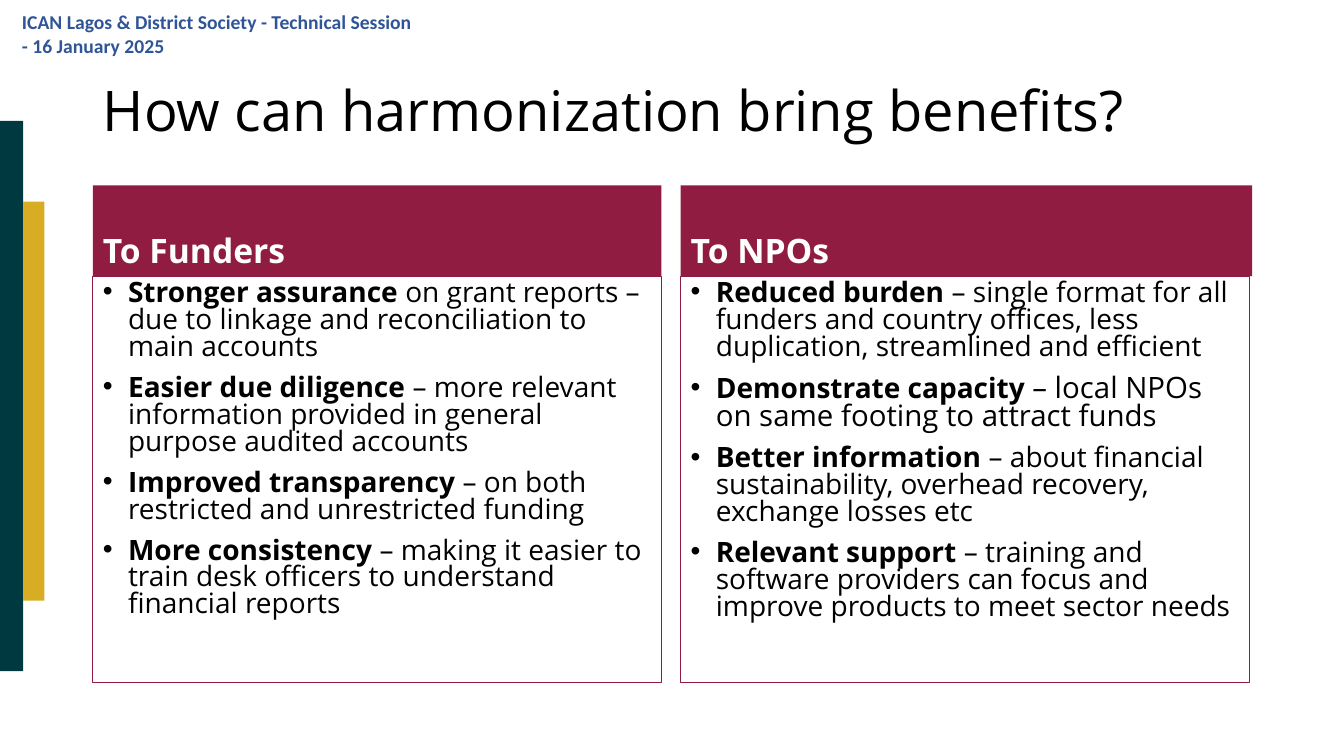
"""Builds the slide on how harmonization benefits funders and NPOs."""
import pptx
import pptx.dml.color
import pptx.enum.shapes
import pptx.enum.text
import pptx.oxml
import pptx.util
from pptx.util import Inches

COLORS = {"teal": "003A40", "gold": "D8AD24", "maroon": "901D41",
          "blue": "2F5597", "black": "000000", "white": "FFFFFF"}
SESSION = "ICAN Lagos & District Society - Technical Session - 16 January 2025"
TITLE = "How can harmonization bring benefits?"
BARS = [("teal", 0, 1.2, 0.23, 5.46), ("gold", 0.23, 2, 0.21, 3.96)]
COLUMNS = [
    {"heading": "To Funders", "left": 0.92, "heading_width": 5.64, "benefits": [
        ("Stronger assurance", " on grant reports – due to linkage and reconciliation to main accounts", 20),
        ("Easier due diligence ", "– more relevant information provided in general purpose audited accounts", 20),
        ("Improved transparency", " – on both restricted and unrestricted funding", 20),
        ("More consistency ", "– making it easier to train desk officers to understand financial reports", 20)]},
    {"heading": "To NPOs", "left": 6.75, "heading_width": 5.67, "benefits": [
        ("Reduced burden ", "– single format for all funders and country offices, less duplication, "
                            "streamlined and efficient", 20),
        ("Demonstrate capacity ", "– local NPOs on same footing to attract funds", 21),
        ("Better information ", "– about financial sustainability, overhead recovery, exchange losses etc", 20),
        ("Relevant support ", "– training and software providers can focus and improve products "
                              "to meet sector needs", 20)]},
]
HEADING_TOP, HEADING_HEIGHT = 1.84, 0.9
LIST_WIDTH, LIST_HEIGHT = 5.64, 4.03
ANCHOR = pptx.enum.text.MSO_ANCHOR


def rgb(name):
    """Return the named palette colour."""
    return pptx.dml.color.RGBColor.from_string(COLORS[name])


def place(shape, left, top, width, height):
    """Move and size a shape, in inches."""
    shape.left, shape.top = Inches(left), Inches(top)
    shape.width, shape.height = Inches(width), Inches(height)


def fill(shape, color):
    """Give a shape a solid fill."""
    shape.fill.solid()
    shape.fill.fore_color.rgb = rgb(color)


def prepare(shape, anchor):
    """Set wrapping and anchoring, and return the text frame."""
    frame = shape.text_frame
    frame.word_wrap = True
    frame.auto_size = pptx.enum.text.MSO_AUTO_SIZE.NONE
    frame.vertical_anchor = anchor
    return frame


def write(paragraph, text, *, size, color="black", bold=False, font="Open Sans", spacing=0.9):
    """Add a formatted run to a left-aligned paragraph."""
    paragraph.alignment = pptx.enum.text.PP_ALIGN.LEFT
    paragraph.line_spacing = spacing
    run = paragraph.add_run()
    run.text = text
    run.font.name, run.font.size, run.font.bold = font, pptx.util.Pt(size), bold
    run.font.color.rgb = rgb(color)


def add_bullet(paragraph):
    """Give a paragraph a round bullet with a hanging indent."""
    properties = paragraph._p.get_or_add_pPr()
    properties.set("marL", str(Inches(0.25)))
    properties.set("indent", str(-Inches(0.25)))
    for tag, attribute, value in (("a:buFont", "typeface", "Arial"), ("a:buChar", "char", "•")):
        bullet = pptx.oxml.xmlchemy.OxmlElement(tag)
        bullet.set(attribute, value)
        properties.append(bullet)


def add_column(heading, benefit_list, column):
    """Fill one heading and its list of benefits."""
    place(heading, column["left"], HEADING_TOP, column["heading_width"], HEADING_HEIGHT)
    fill(heading, "maroon")
    heading_line = prepare(heading, ANCHOR.BOTTOM).paragraphs[0]
    heading_line.space_before = pptx.util.Pt(0)
    write(heading_line, column["heading"], size=24, color="white", bold=True)

    place(benefit_list, column["left"], HEADING_TOP + HEADING_HEIGHT, LIST_WIDTH, LIST_HEIGHT)
    benefit_list.line.color.rgb = rgb("maroon")
    benefit_list.line.width = pptx.util.Pt(0.75)
    frame = prepare(benefit_list, ANCHOR.TOP)
    for number, (benefit, detail, detail_size) in enumerate(column["benefits"]):
        paragraph = frame.add_paragraph() if number else frame.paragraphs[0]
        add_bullet(paragraph)
        paragraph.space_before = pptx.util.Pt(10 if number else 0)
        write(paragraph, benefit, size=20, bold=True, spacing=0.8)
        write(paragraph, detail, size=detail_size, spacing=0.8)


def main():
    """Build and save the slide."""
    deck = pptx.Presentation()
    deck.slide_width, deck.slide_height = Inches(13.33), Inches(7.5)
    slide = deck.slides.add_slide(deck.slide_layouts.get_by_name("Comparison"))

    for color, *box in BARS:
        bar = slide.shapes.add_shape(pptx.enum.shapes.MSO_SHAPE.RECTANGLE, *map(Inches, box))
        bar.shadow.inherit = False
        fill(bar, color)
        bar.line.fill.background()

    session = slide.shapes.add_textbox(*map(Inches, (0.12, 0.05, 4.1, 0.4)))
    write(prepare(session, ANCHOR.TOP).paragraphs[0], SESSION,
          size=14, color="blue", bold=True, font="Calibri", spacing=1.0)

    title = slide.shapes.title
    place(title, 0.92, 0.4, 11.5, 1.45)
    write(prepare(title, ANCHOR.MIDDLE).paragraphs[0], TITLE, size=40)

    _, *bodies = slide.placeholders
    for heading, benefit_list, column in zip(bodies[::2], bodies[1::2], COLUMNS):
        add_column(heading, benefit_list, column)

    deck.save("out.pptx")


if __name__ == "__main__":
    main()
